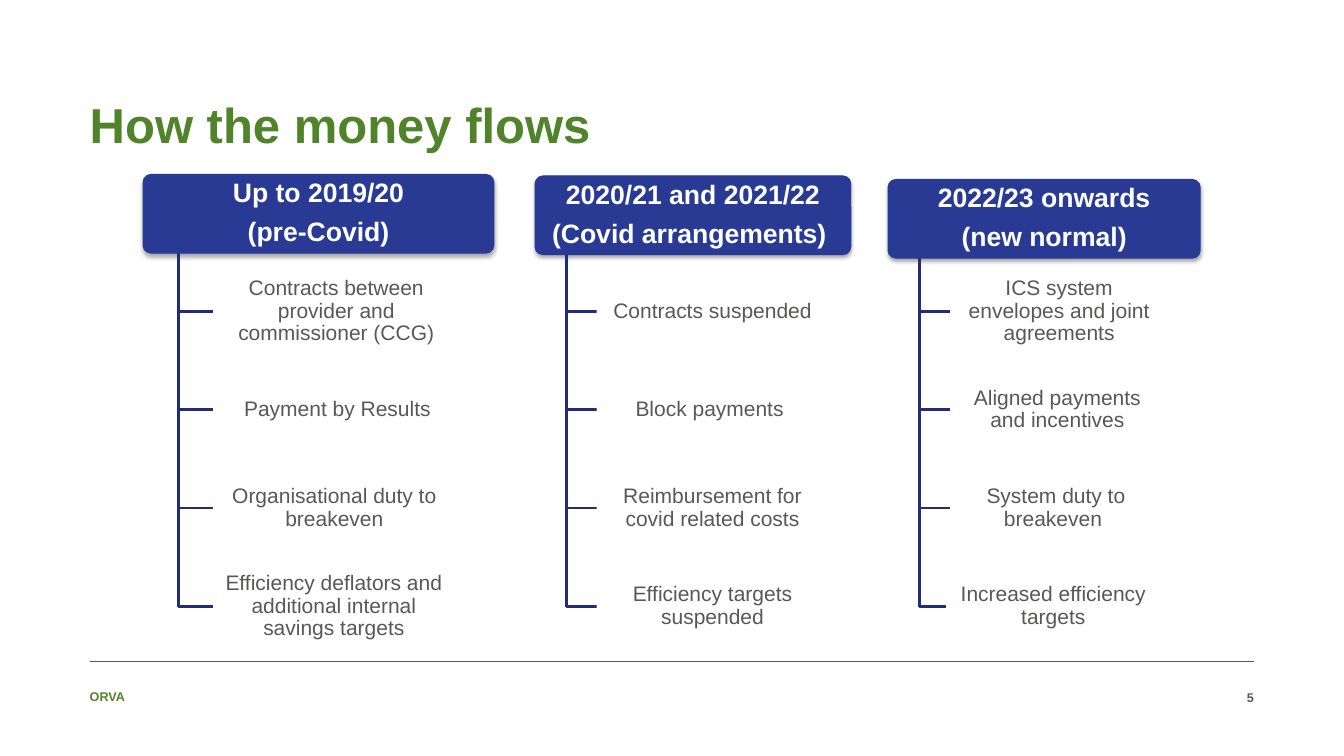
from dataclasses import dataclass

from lxml.etree import SubElement
from pptx import Presentation
from pptx.dml.color import RGBColor
from pptx.enum.shapes import MSO_CONNECTOR, MSO_SHAPE
from pptx.enum.text import MSO_ANCHOR, MSO_AUTO_SIZE, PP_ALIGN
from pptx.oxml.ns import qn
from pptx.shapes.autoshape import Shape
from pptx.slide import Slide
from pptx.text.text import TextFrame
from pptx.util import Pt

GREEN, GREY, WHITE = "51832B", "595857", "FFFFFF"
HEADER_BLUE, BRANCH_BLUE = "293A95", "212E77"
BOX_HEIGHT = 56.16
FIRST_ROW_TOP, ROW_PITCH = 194.4, 70.2
MARGIN_LEFT, CONTENT_WIDTH = 64.1, 831.6


@dataclass
class Item:
    text: str
    width: float
    shift: float = 0


@dataclass
class Period:
    heading: tuple[str, str]
    left: float
    top: float
    width: float
    item_left: float
    items: list[Item]


PERIODS = [
    Period(("Up to 2019/20", "(pre-Covid)"), 102.2, 124.6, 250.6, 152.4, [
        Item("Contracts between provider and commissioner (CCG)", 175.7),
        Item("Payment by Results", 177.4),
        Item("Organisational duty to breakeven", 172.9),
        Item("Efficiency deflators and additional internal savings targets", 172.2),
    ]),
    Period(("2020/21 and 2021/22", "(Covid arrangements) "), 382.2, 125.7, 225.5, 426.2, [
        Item("Contracts suspended", 165.6),
        Item("Block payments ", 165.6),
        Item("Reimbursement for covid related costs", 165.6),
        Item("Efficiency targets suspended", 165.6),
    ]),
    Period(("2022/23 onwards", "(new normal)"), 634.3, 128.2, 223, 678.8, [
        Item("ICS system envelopes and joint agreements", 155.5),
        Item("Aligned payments and incentives", 153),
        Item("System duty to breakeven ", 150.9),
        Item("Increased efficiency targets", 153, -2.9),
    ]),
]


def color(hex_code: str) -> RGBColor:
    return RGBColor.from_string(hex_code)


def set_frame(frame: TextFrame, anchor: MSO_ANCHOR, side: float = 0, edge: float = 0) -> None:
    frame.word_wrap = True
    frame.auto_size = MSO_AUTO_SIZE.NONE
    frame.vertical_anchor = anchor
    frame.margin_left = frame.margin_right = Pt(side)
    frame.margin_top = frame.margin_bottom = Pt(edge)


def write(frame: TextFrame, lines: tuple[str, ...], size: float, hex_code: str,
          bold: bool, align: PP_ALIGN, line_spacing: float = 1, after: float = 0) -> None:
    for index, line in enumerate(lines):
        paragraph = frame.add_paragraph() if index else frame.paragraphs[0]
        paragraph.alignment = align
        paragraph.line_spacing = line_spacing
        paragraph.space_before = Pt(0)
        paragraph.space_after = Pt(after)
        run = paragraph.add_run()
        run.text = line
        run.font.name = "Arial"
        run.font.size = Pt(size)
        run.font.bold = bold
        run.font.color.rgb = color(hex_code)


def add_box(slide: Slide, left: float, top: float, width: float, fill: str) -> Shape:
    box = slide.shapes.add_shape(MSO_SHAPE.ROUNDED_RECTANGLE,
                                 Pt(left), Pt(top), Pt(width), Pt(BOX_HEIGHT))
    box.adjustments[0] = 0.1
    box.shadow.inherit = False
    box.fill.solid()
    box.fill.fore_color.rgb = color(fill)
    box.line.fill.background()
    return box


def add_heading(slide: Slide, period: Period) -> None:
    heading = add_box(slide, period.left, period.top, period.width, HEADER_BLUE)
    heading.line.color.rgb = color(HEADER_BLUE)
    heading.line.width = Pt(0.75)
    # Soft shadow straight below
    effects = heading._element.spPr.find(qn("a:effectLst"))
    shadow = SubElement(effects, qn("a:outerShdw"), blurRad=str(Pt(3.1)),
                        dist=str(Pt(1.8)), dir="5400000", rotWithShape="0")
    black = SubElement(shadow, qn("a:srgbClr"), val="000000")
    SubElement(black, qn("a:alpha"), val="35000")
    set_frame(heading.text_frame, MSO_ANCHOR.MIDDLE, 3, 2)
    write(heading.text_frame, period.heading, 19, WHITE, True, PP_ALIGN.CENTER, 0.9, 7.4)


def add_branch(slide: Slide, x: float, top: float, bottom: float, end: float) -> None:
    builder = slide.shapes.build_freeform(Pt(x), Pt(top))
    builder.add_line_segments([(Pt(x), Pt(bottom)), (Pt(end), Pt(bottom))], close=False)
    branch = builder.convert_to_shape()
    branch.shadow.inherit = False
    branch.fill.background()
    branch.line.color.rgb = color(BRANCH_BLUE)
    branch.line.width = Pt(2)


def add_item(slide: Slide, item: Item, left: float, top: float) -> None:
    box = add_box(slide, left, top, item.width, WHITE)
    white = box._element.spPr.find(qn("a:solidFill")).find(qn("a:srgbClr"))
    SubElement(white, qn("a:alpha"), val="90000")
    set_frame(box.text_frame, MSO_ANCHOR.MIDDLE, 2.2, 1.5)
    write(box.text_frame, (item.text,), 15, GREY, False, PP_ALIGN.CENTER, 0.9, 5.8)


def add_period(slide: Slide, period: Period) -> None:
    add_heading(slide, period)
    branch_x = period.left + period.width / 10
    for row, item in enumerate(period.items):
        left = period.item_left + item.shift
        top = FIRST_ROW_TOP + row * ROW_PITCH
        add_branch(slide, branch_x, period.top + BOX_HEIGHT, top + BOX_HEIGHT / 2, left)
        add_item(slide, item, left, top)


def add_label(slide: Slide, text: str, left: float, top: float, width: float,
              height: float, hex_code: str, align: PP_ALIGN) -> None:
    label = slide.shapes.add_textbox(Pt(left), Pt(top), Pt(width), Pt(height))
    set_frame(label.text_frame, MSO_ANCHOR.MIDDLE)
    write(label.text_frame, (text,), 9, hex_code, True, align)


def main() -> None:
    deck = Presentation()
    deck.slide_width, deck.slide_height = Pt(960), Pt(540)
    slide = deck.slides.add_slide(deck.slide_layouts[5])

    # Title
    title = slide.shapes.title
    title.left, title.top = Pt(MARGIN_LEFT), Pt(67)
    title.width, title.height = Pt(CONTENT_WIDTH), Pt(42.5)
    set_frame(title.text_frame, MSO_ANCHOR.BOTTOM)
    write(title.text_frame, ("How the money flows",), 35, GREEN, True, PP_ALIGN.LEFT)

    # Footer
    right = MARGIN_LEFT + CONTENT_WIDTH
    rule = slide.shapes.add_connector(MSO_CONNECTOR.STRAIGHT, Pt(MARGIN_LEFT), Pt(472.3),
                                      Pt(right), Pt(472.3))
    rule.line.color.rgb = color(GREY)
    rule.line.width = Pt(0.25)
    SubElement(rule._element.spPr, qn("a:effectLst"))
    add_label(slide, "ORVA", MARGIN_LEFT, 486, 226.8, 22.3, GREEN, PP_ALIGN.LEFT)
    add_label(slide, "5", right - 37.4, 492.5, 37.4, 10.8, GREY, PP_ALIGN.RIGHT)

    # Funding periods
    for period in PERIODS:
        add_period(slide, period)

    deck.save("out.pptx")


if __name__ == "__main__":
    main()
